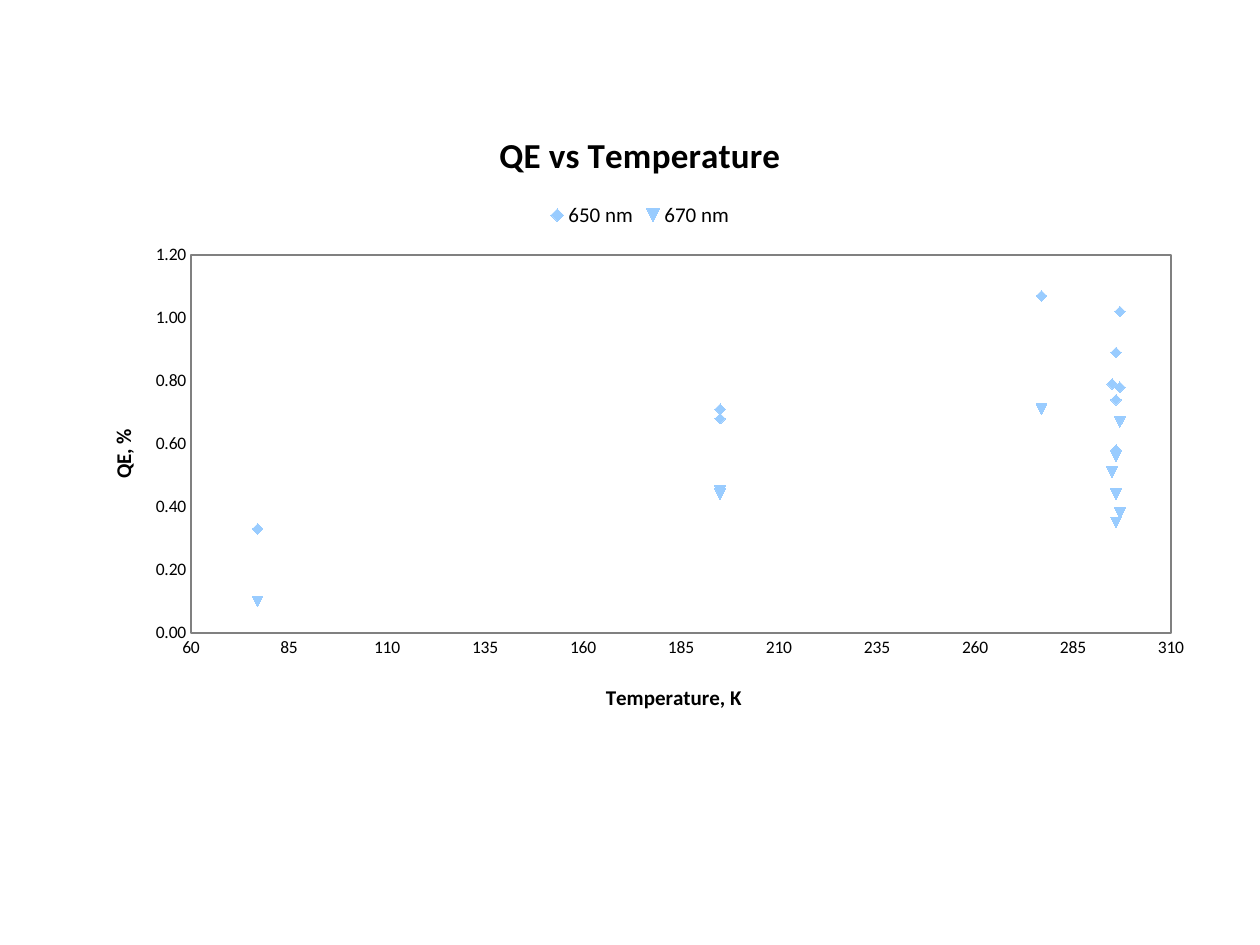
from dataclasses import dataclass

from lxml.etree import SubElement
from pptx import Presentation
from pptx.chart.data import XyChartData
from pptx.dml.color import RGBColor
from pptx.enum.chart import XL_CHART_TYPE as ChartType
from pptx.enum.chart import XL_LEGEND_POSITION as LegendPosition
from pptx.enum.chart import XL_MARKER_STYLE as MarkerStyle
from pptx.enum.chart import XL_TICK_MARK as TickMark
from pptx.oxml import parse_xml
from pptx.oxml.ns import nsdecls, qn
from pptx.util import Emu, Pt

PX = 914400 // 126
FONT = "Calibri"
BLACK = RGBColor(0x00, 0x00, 0x00)
GRAY = RGBColor(0x80, 0x80, 0x80)
LIGHT_BLUE = RGBColor(0x99, 0xCC, 0xFF)


@dataclass
class Box:
    left: int
    top: int
    width: int = 0
    height: int = 0


@dataclass
class AxisStyle:
    title: str
    title_box: Box
    minimum: float
    maximum: float
    major: float
    number_format: str


@dataclass
class Wavelength:
    name: str
    efficiencies: list[float]
    marker: MarkerStyle


CHART = Box(73, 105, 1134, 624)
PLOT = Box(191, 255, 980, 378)
TEMPERATURES = [295, 277, 296, 195, 296, 195, 297, 77, 297, 296]
WAVELENGTHS = [
    Wavelength("650 nm", [0.79, 1.07, 0.89, 0.68, 0.74, 0.71, 1.02, 0.33, 0.78, 0.58],
               MarkerStyle.DIAMOND),
    Wavelength("670 nm", [0.51, 0.71, 0.56, 0.44, 0.44, 0.45, 0.67, 0.1, 0.38, 0.35],
               MarkerStyle.AUTOMATIC),
]
TEMPERATURE_AXIS = AxisStyle("Temperature, K", Box(602, 679), 60, 310, 25, "0")
EFFICIENCY_AXIS = AxisStyle("QE, %", Box(105, 425), 0, 1.2, 0.2, "0.00")


def px(length: int) -> Emu:
    return Emu(length * PX)


def set_font(font, size: int, bold: bool = False) -> None:
    font.name, font.size, font.bold = FONT, Pt(size), bold
    font.color.rgb = BLACK


def write_title(title, text: str, size: int) -> None:
    run = title.text_frame.paragraphs[0].add_run()
    run.text = text
    set_font(run.font, size, bold=True)


def place(element, box: Box, inner: bool = False) -> None:
    """Give a chart part a manual layout in fractions of the chart."""
    layout = element.find(qn("c:layout"))
    if layout is None:
        layout = parse_xml(f"<c:layout {nsdecls('c')}/>")
        element.insert(1 if element.find(qn("c:tx")) is not None else 0, layout)
    manual = SubElement(layout, qn("c:manualLayout"))
    values = {"xMode": "edge", "yMode": "edge",
              "x": (box.left - CHART.left) / CHART.width,
              "y": (box.top - CHART.top) / CHART.height}
    if inner:
        values = {"layoutTarget": "inner", **values,
                  "w": box.width / CHART.width, "h": box.height / CHART.height}
    for tag, value in values.items():
        SubElement(manual, qn(f"c:{tag}")).set("val", str(value))


def style_axis(axis, style: AxisStyle) -> None:
    axis.minimum_scale, axis.maximum_scale = style.minimum, style.maximum
    axis.major_unit = style.major
    axis.has_major_gridlines = False
    axis.major_tick_mark = axis.minor_tick_mark = TickMark.NONE
    axis.tick_labels.number_format = style.number_format
    axis.tick_labels.number_format_is_linked = False
    set_font(axis.tick_labels.font, 10)
    axis.format.line.color.rgb = GRAY
    axis.format.line.width = Pt(0.75)
    write_title(axis.axis_title, style.title, 12)
    place(axis.axis_title._element, style.title_box)


def style_series(series, wavelength: Wavelength) -> None:
    series.format.line.fill.background()
    marker = series.marker
    marker.style, marker.size = wavelength.marker, 6
    marker.format.fill.solid()
    marker.format.fill.fore_color.rgb = LIGHT_BLUE
    marker.format.line.fill.background()


def add_scatter(slide) -> None:
    data = XyChartData()
    for wavelength in WAVELENGTHS:
        series = data.add_series(wavelength.name)
        for temperature, efficiency in zip(TEMPERATURES, wavelength.efficiencies):
            series.add_data_point(temperature, efficiency)
    chart = slide.shapes.add_chart(
        ChartType.XY_SCATTER, px(CHART.left), px(CHART.top),
        px(CHART.width), px(CHART.height), data).chart
    set_font(chart.font, 10)
    write_title(chart.chart_title, "QE vs Temperature", 20)
    chart.has_legend = True
    chart.legend.position = LegendPosition.TOP
    chart.legend.include_in_layout = False
    set_font(chart.legend.font, 12)
    style_axis(chart.category_axis, TEMPERATURE_AXIS)
    style_axis(chart.value_axis, EFFICIENCY_AXIS)
    plot = chart.plots[0]
    plot.vary_by_categories = False
    for series, wavelength in zip(plot.series, WAVELENGTHS):
        series.smooth = False
        style_series(series, wavelength)

    # Plot area position and frame
    plot_area = chart._chartSpace.chart.plotArea
    place(plot_area, PLOT, inner=True)
    plot_area.append(parse_xml(
        f"<c:spPr {nsdecls('c', 'a')}><a:noFill/><a:ln w='9525'><a:solidFill>"
        f"<a:srgbClr val='{GRAY}'/></a:solidFill></a:ln></c:spPr>"))


def main() -> None:
    presentation = Presentation()
    presentation.slide_width, presentation.slide_height = px(1260), px(945)
    slide = presentation.slides.add_slide(presentation.slide_layouts[6])
    add_scatter(slide)
    presentation.save("out.pptx")


if __name__ == "__main__":
    main()
